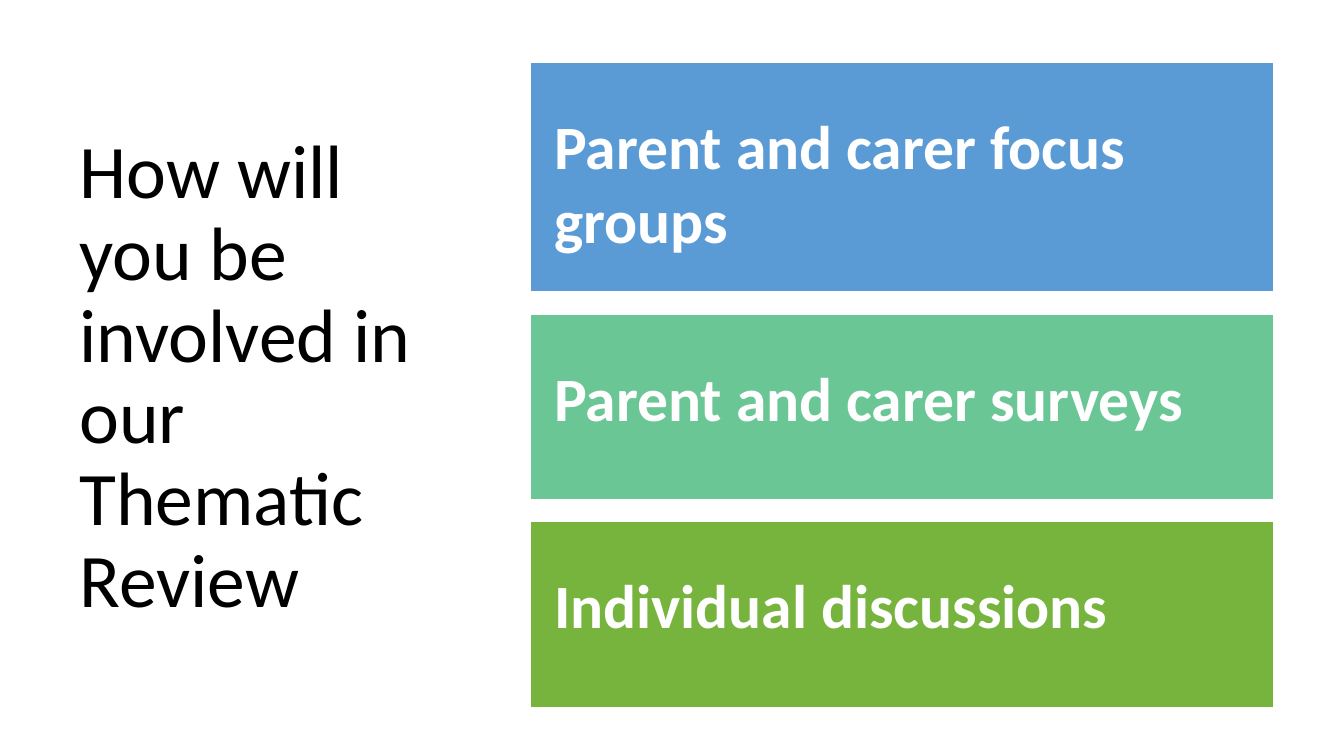
from dataclasses import dataclass

from pptx import Presentation
from pptx.dml.color import RGBColor
from pptx.enum.shapes import MSO_SHAPE
from pptx.enum.text import MSO_ANCHOR, PP_ALIGN
from pptx.slide import Slide
from pptx.text.text import TextFrame
from pptx.util import Pt

BAR_LEFT, BAR_TOP, BAR_WIDTH, BAR_GAP = 378.72, 43.92, 531.36, 15.12
WHITE = "FFFFFF"


@dataclass
class Bar:
    lines: list[str]
    height: float
    fill: str


BARS = [
    Bar(["Parent and carer focus", "groups"], 164.88, "5B9BD5"),
    Bar(["Parent and carer surveys"], 133.2, "6AC694"),
    Bar(["Individual discussions"], 133.2, "76B43E"),
]


def color(value: str) -> RGBColor:
    return RGBColor.from_string(value)


def write_lines(frame: TextFrame, lines: list[str], size: float,
                ink: str, bold: bool = False, spacing: float = 1.0) -> None:
    frame.word_wrap = True
    para = frame.paragraphs[0]
    para.alignment = PP_ALIGN.LEFT
    para.line_spacing = spacing
    for index, line in enumerate(lines):
        if index:
            para.add_line_break()
        span = para.add_run()
        span.text = line
        span.font.name = "Calibri"
        span.font.size = Pt(size)
        span.font.bold = bold
        span.font.color.rgb = color(ink)


def draw_title(page: Slide) -> None:
    box = page.shapes.add_textbox(Pt(49.68), Pt(50.4), Pt(269.28), Pt(439.92))
    box.text_frame.vertical_anchor = MSO_ANCHOR.MIDDLE
    write_lines(box.text_frame, ["How will you be involved in our", "Thematic Review"],
                54, "000000", spacing=0.9)


def draw_bar(page: Slide, bar: Bar, top: float) -> None:
    box = page.shapes.add_shape(MSO_SHAPE.RECTANGLE, Pt(BAR_LEFT), Pt(top),
                                Pt(BAR_WIDTH), Pt(bar.height))
    box.shadow.inherit = False
    box.fill.solid()
    box.fill.fore_color.rgb = color(bar.fill)
    box.line.color.rgb = color(WHITE)
    box.line.width = Pt(1.5)
    frame = box.text_frame
    frame.vertical_anchor = MSO_ANCHOR.TOP
    frame.margin_left = Pt(17.1)
    frame.margin_top = Pt(32.9)
    write_lines(frame, bar.lines, 44, WHITE, bold=True)


def main() -> None:
    deck = Presentation()
    deck.slide_width, deck.slide_height = Pt(960), Pt(540)
    page = deck.slides.add_slide(deck.slide_layouts[6])

    # Question on the left
    draw_title(page)

    # Stacked answers on the right
    top = BAR_TOP
    for bar in BARS:
        draw_bar(page, bar, top)
        top += bar.height + BAR_GAP

    deck.save("out.pptx")


if __name__ == "__main__":
    main()
